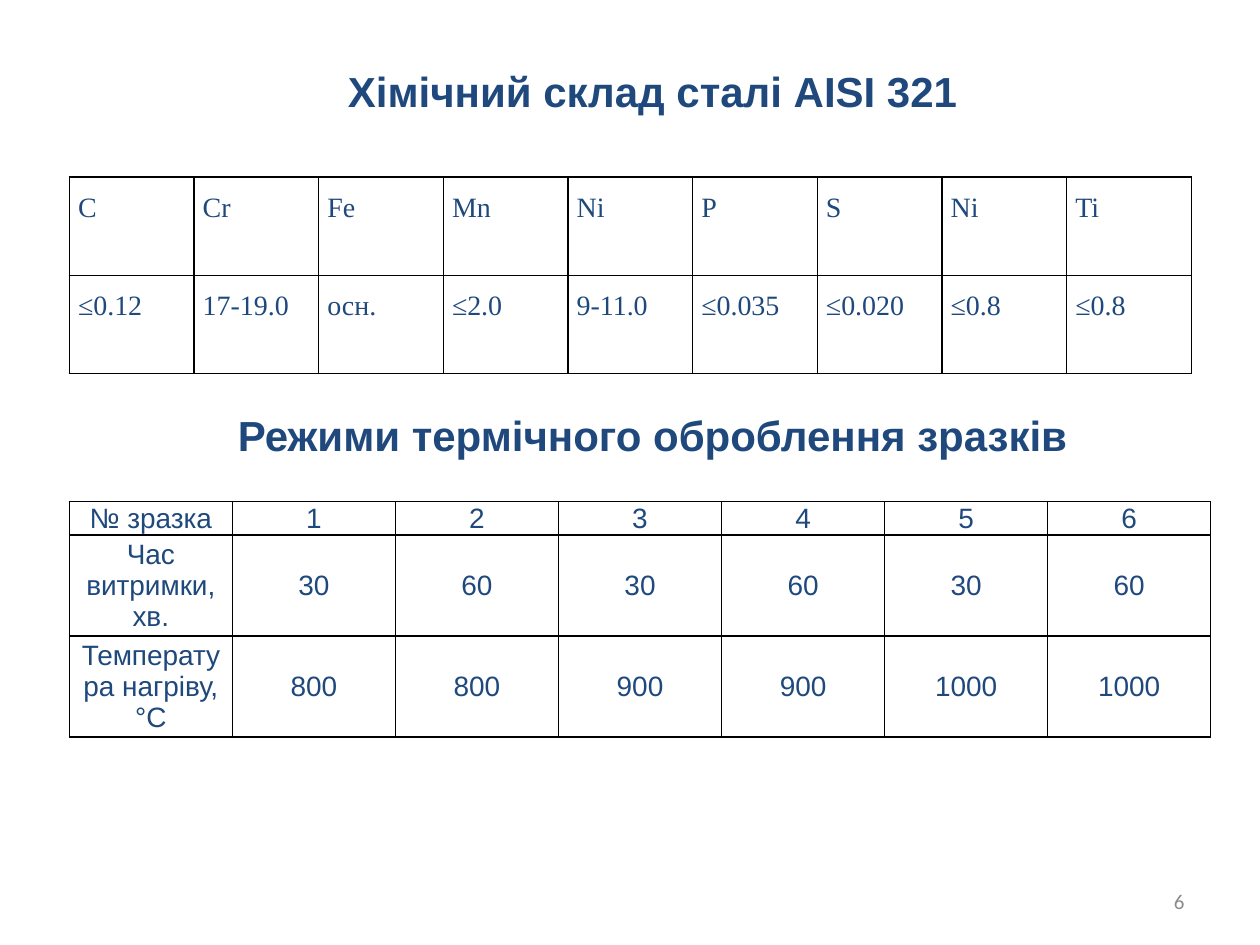
from lxml.etree import SubElement
from pptx import Presentation
from pptx.dml.color import RGBColor
from pptx.enum.text import MSO_ANCHOR, MSO_AUTO_SIZE, PP_ALIGN
from pptx.oxml import parse_xml
from pptx.oxml.ns import nsdecls, qn
from pptx.util import Pt

NAVY, GREY, BLACK = "1F497D", "8C8C8C", "000000"


def color(code):
    return RGBColor.from_string(code)


class Page:
    def __init__(self, slide, ink=NAVY, face="Arial"):
        self.slide, self.ink, self.face = slide, ink, face

    def add_text(self, frame, text, size, align, face=None, ink=None, bold=False):
        para = frame.paragraphs[0]
        para.alignment = align
        run = para.add_run()
        run.text = text
        font = run.font
        font.size, font.bold, font.name = Pt(size), bold, face or self.face
        font.color.rgb = color(ink or self.ink)
        return para

    def head(self, shape, text, top):
        """Place a shape as a centred bold heading."""
        shape.left, shape.top = Pt(112.3), Pt(top)
        shape.width, shape.height = Pt(521.3), Pt(36)
        frame = shape.text_frame
        frame.word_wrap = True
        frame.auto_size = MSO_AUTO_SIZE.SHAPE_TO_FIT_TEXT
        frame.vertical_anchor = MSO_ANCHOR.TOP
        self.add_text(frame, text, 24, PP_ALIGN.CENTER, bold=True)

    def title(self, text, top):
        self.head(self.slide.shapes.title, text, top)

    def label(self, text, top):
        box = self.slide.shapes.add_textbox(0, 0, 0, 0)
        self.head(box, text, top)

    def number(self, text):
        box = self.slide.shapes.add_textbox(Pt(516), Pt(500.5), Pt(168), Pt(28.75))
        frame = box.text_frame
        frame.word_wrap = True
        frame.vertical_anchor = MSO_ANCHOR.MIDDLE
        self.add_text(frame, text, 12, PP_ALIGN.RIGHT, "Calibri", GREY)

    def edge(self, cell):
        """Draw a thin black line on all four sides of a cell."""
        props = cell._tc.get_or_add_tcPr()
        for spot, side in enumerate("LRTB"):
            line = parse_xml(f'<a:ln{side} {nsdecls("a")} w="{Pt(1)}"/>')
            fill = SubElement(line, qn("a:solidFill"))
            SubElement(fill, qn("a:srgbClr"), val=BLACK)
            props.insert(spot, line)

    def table(self, rows, top, width, highs, align, anchor, face=None, space=None):
        cols = len(rows[0])
        grid = self.slide.shapes.add_table(
            len(rows), cols, Pt(39.6), Pt(top), Pt(width), Pt(sum(highs))).table
        grid.first_row = grid.horz_banding = False
        for col in grid.columns:
            col.width = Pt(width / cols)
        for r, (row, high) in enumerate(zip(rows, highs)):
            grid.rows[r].height = Pt(high)
            for c, text in enumerate(row):
                cell = grid.cell(r, c)
                cell.fill.background()
                self.edge(cell)
                cell.margin_left = cell.margin_right = Pt(5)
                cell.margin_top = cell.margin_bottom = 0
                cell.vertical_anchor = anchor
                para = self.add_text(cell.text_frame, text, 16, align, face)
                para.line_spacing = space


def main():
    deck = Presentation()
    deck.slide_width, deck.slide_height = Pt(720), Pt(540)
    page = Page(deck.slides.add_slide(deck.slide_layouts[5]))

    page.number("6")
    page.label("Режими термічного оброблення зразків", 230.4)
    page.title("Хімічний склад сталі AISI 321", 33.8)

    modes = [
        ["№ зразка", "1", "2", "3", "4", "5", "6"],
        ["Час витримки, хв."] + ["30", "60"] * 3,
        ["Температура нагріву, °С", "800", "800", "900", "900", "1000", "1000"],
    ]
    page.table(modes, 286.6, 652.3, [19, 57.7, 57.7],
               PP_ALIGN.CENTER, MSO_ANCHOR.MIDDLE)

    steel = [
        ["C", "Cr", "Fe", "Mn", "Ni", "P", "S", "Ni", "Ti"],
        ["≤0.12", "17-19.0", "осн.", "≤2.0", "9-11.0",
         "≤0.035", "≤0.020", "≤0.8", "≤0.8"],
    ]
    page.table(steel, 101.2, 641.2, [56.2, 56.2],
               PP_ALIGN.JUSTIFY, MSO_ANCHOR.TOP, "Times New Roman", 1.5)

    deck.save("out.pptx")


if __name__ == "__main__":
    main()
